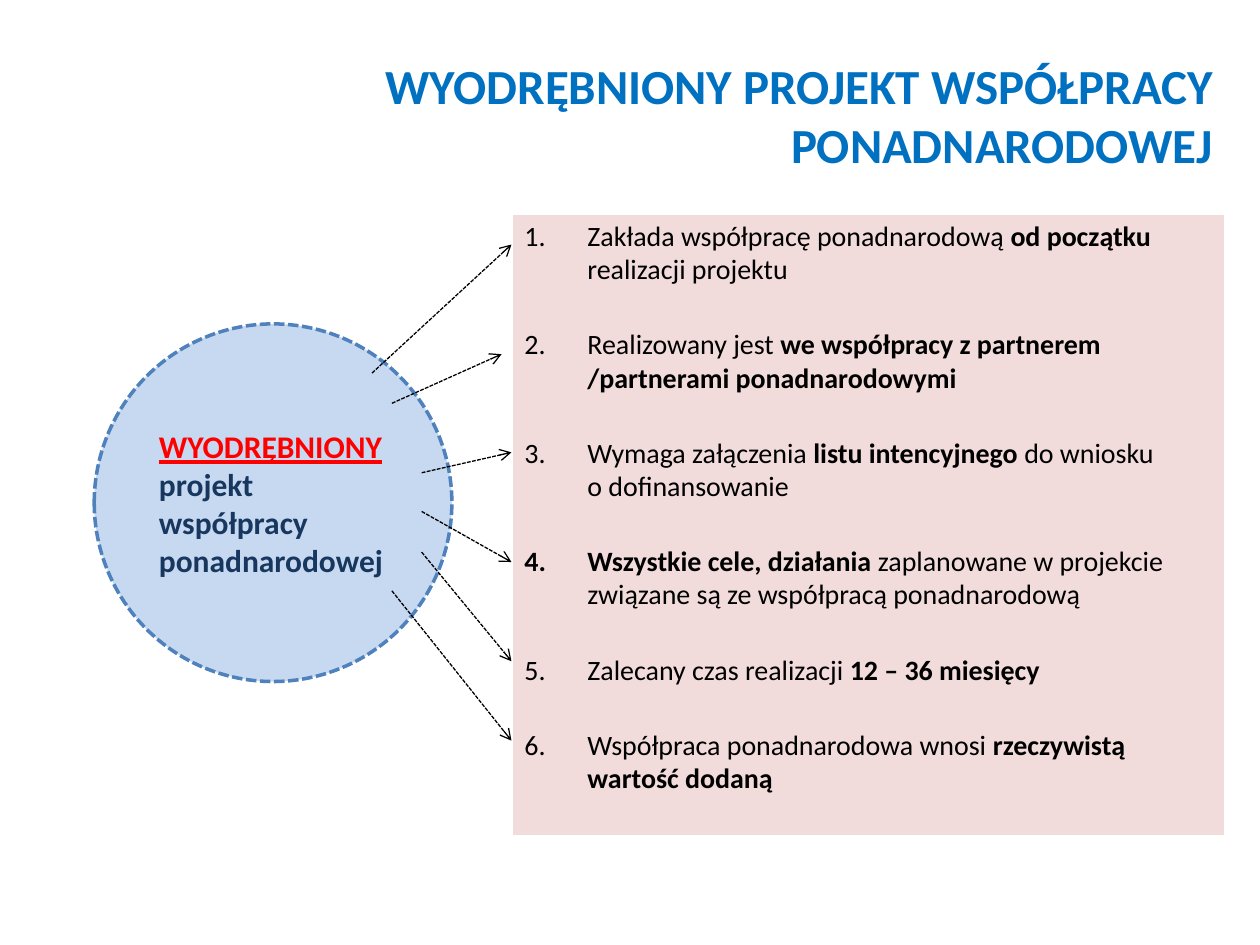
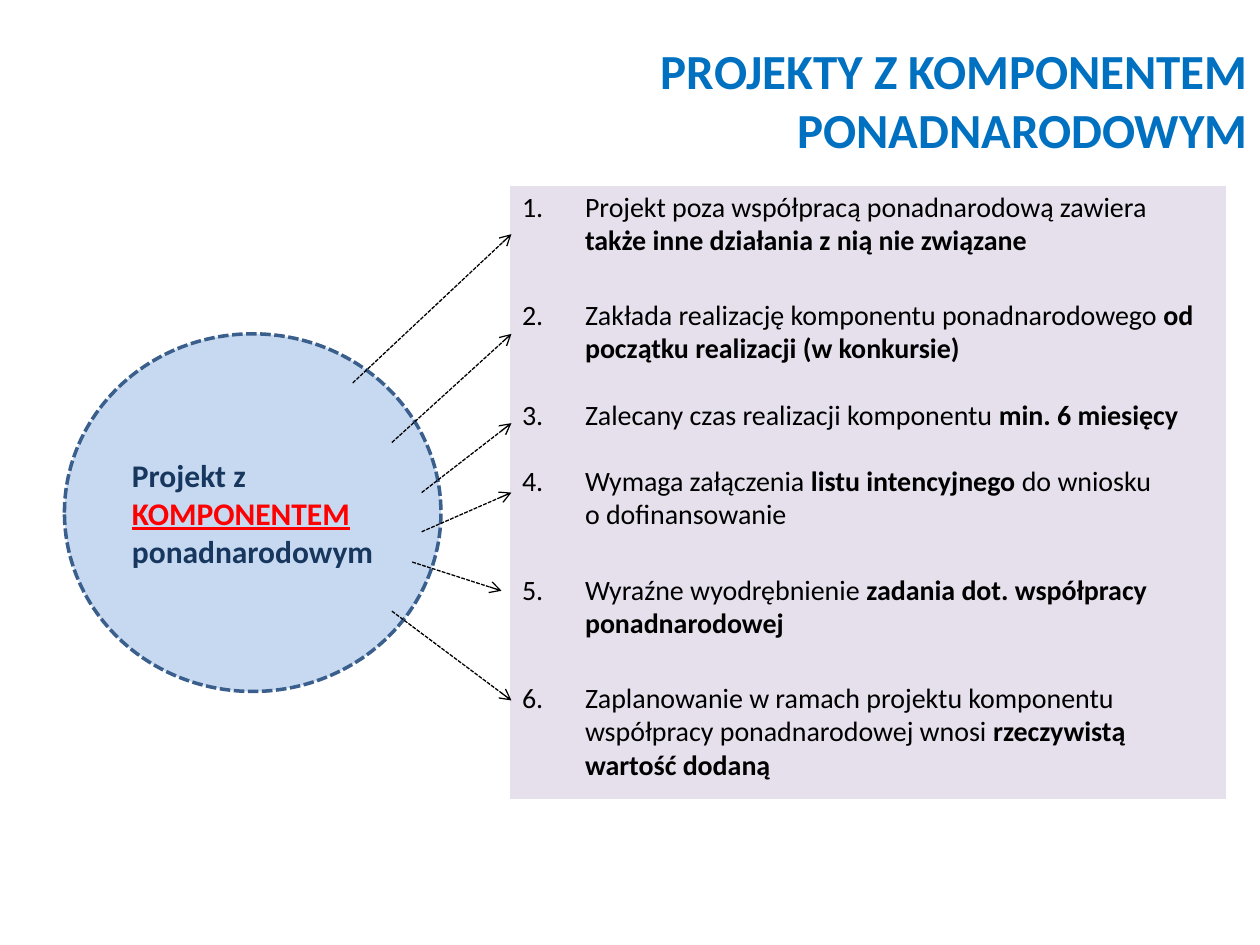
from dataclasses import dataclass

from lxml import etree
from pptx import Presentation
from pptx.dml.color import RGBColor
from pptx.enum.dml import MSO_LINE
from pptx.enum.shapes import MSO_CONNECTOR, MSO_SHAPE
from pptx.enum.text import MSO_ANCHOR, MSO_AUTO_SIZE, PP_ALIGN
from pptx.oxml.ns import qn
from pptx.util import Cm, Pt

DASH = MSO_LINE.SQUARE_DOT
STRAIGHT = MSO_CONNECTOR.STRAIGHT
OVAL = MSO_SHAPE.OVAL
MIDDLE = MSO_ANCHOR.MIDDLE
LEFT, RIGHT = PP_ALIGN.LEFT, PP_ALIGN.RIGHT
NO_FIT = MSO_AUTO_SIZE.NONE

# Shared look
FONT = "Calibri"
BLUE, NAVY, RED, BLACK, SKY = "0070C0", "17375E", "FF0000", "000000", "C6D9F1"
TITLE_ONLY = 5
INDENT = Cm(1.27)


@dataclass(frozen=True)
class Box:
    left: float
    top: float
    width: float
    height: float

    def sides(self) -> tuple:
        return Cm(self.left), Cm(self.top), Cm(self.width), Cm(self.height)


@dataclass(frozen=True)
class Item:
    text: str  # bold words stand between asterisks
    gap: float = 24  # points above the item


@dataclass(frozen=True)
class Arrow:
    x1: float
    y1: float
    x2: float
    y2: float


@dataclass(frozen=True)
class Page:
    title: str
    head: Box
    topic: str  # the key word stands between asterisks
    disc: Box
    rim: str
    grid: Box
    split: float  # width of the empty left column
    tint: str
    items: tuple[Item, ...]
    arrows: tuple[Arrow, ...]


PAGES = (
    Page(
        title="WYODRĘBNIONY PROJEKT WSPÓŁPRACY PONADNARODOWEJ",
        head=Box(6.7, 0.91, 18, 2.8),
        topic="*WYODRĘBNIONY* projekt współpracy ponadnarodowej",
        disc=Box(1.9, 6.53, 7.21, 7.21),
        rim="4F81BD",
        grid=Box(1.28, 4.32, 23.42, 12.52),
        split=9.04,
        tint="F2DCDB",
        items=(
            Item("Zakłada współpracę ponadnarodową *od początku* realizacji projektu"),
            Item("Realizowany jest *we współpracy z partnerem /partnerami ponadnarodowymi*"),
            Item("Wymaga załączenia *listu intencyjnego* do wniosku\no dofinansowanie"),
            Item("*Wszystkie cele, działania* zaplanowane w projekcie "
                 "związane są ze współpracą ponadnarodową"),
            Item("Zalecany czas realizacji *12 – 36 miesięcy*"),
            Item("Współpraca ponadnarodowa wnosi *rzeczywistą wartość dodaną*"),
        ),
        arrows=(
            Arrow(7.5, 7.52, 10.31, 4.93),
            Arrow(7.9, 8.13, 10.11, 7.14),
            Arrow(8.5, 9.53, 10.31, 9.12),
            Arrow(8.5, 10.31, 10.31, 11.33),
            Arrow(8.5, 11.13, 10.31, 13.33),
            Arrow(7.9, 11.91, 10.31, 14.93),
        ),
    ),
    Page(
        title="PROJEKTY Z KOMPONENTEM PONADNARODOWYM",
        head=Box(9.3, 0.71, 16.1, 2.59),
        topic="Projekt z *KOMPONENTEM* ponadnarodowym",
        disc=Box(1.3, 6.73, 7.59, 7.21),
        rim="3A5F8C",
        grid=Box(1.3, 3.73, 23.42, 12.4),
        split=8.97,
        tint="E6E0EC",
        items=(
            Item("Projekt poza współpracą ponadnarodową zawiera "
                 "*także inne działania z nią nie związane*"),
            Item("Zakłada realizację komponentu ponadnarodowego "
                 "*od początku realizacji (w konkursie)*"),
            Item("Zalecany czas realizacji komponentu *min. 6 miesięcy*", 19),
            Item("Wymaga załączenia *listu intencyjnego* do wniosku\no dofinansowanie", 19),
            Item("Wyraźne wyodrębnienie *zadania dot. współpracy ponadnarodowej*"),
            Item("Zaplanowanie w ramach projektu komponentu współpracy "
                 "ponadnarodowej wnosi *rzeczywistą wartość dodaną*"),
        ),
        arrows=(
            Arrow(7.11, 7.72, 10.31, 4.72),
            Arrow(7.9, 8.92, 10.31, 6.73),
            Arrow(8.5, 9.93, 10.31, 8.53),
            Arrow(8.5, 10.72, 10.31, 9.93),
            Arrow(8.31, 11.33, 10.11, 11.91),
            Arrow(7.9, 12.32, 10.31, 14.12),
        ),
    ),
)


def rgb(code: str) -> RGBColor:
    return RGBColor.from_string(code)


def style(run, size: float, color: str, bold: bool) -> None:
    run.font.name = FONT
    run.font.size = Pt(size)
    run.font.bold = bold
    run.font.color.rgb = rgb(color)


def write(para, text: str) -> list[tuple]:
    """Add runs and return each one with its marked state."""
    runs = []
    for i, part in enumerate(text.split("*")):
        for j, line in enumerate(part.split("\n")):
            if j:
                para.add_line_break()
            if line:
                run = para.add_run()
                run.text = line
                runs.append((run, i % 2 == 1))
    return runs


def add_title(slide, page: Page) -> None:
    head = slide.shapes.title
    head.left, head.top, head.width, head.height = page.head.sides()
    frame = head.text_frame
    frame.text = page.title
    frame.auto_size = NO_FIT
    frame.vertical_anchor = MIDDLE
    para = frame.paragraphs[0]
    para.alignment = RIGHT
    style(para.runs[0], 28, BLUE, True)


def add_item(para, item: Item, first: bool) -> None:
    props = para._p.get_or_add_pPr()
    props.set("marL", str(INDENT))
    props.set("indent", str(-INDENT))
    etree.SubElement(props, qn("a:buAutoNum"), type="arabicPeriod")
    para.line_spacing = Pt(19)
    para.space_before = Pt(0 if first else item.gap)
    for run, bold in write(para, item.text):
        style(run, 16, BLACK, bold)


def add_grid(slide, page: Page) -> None:
    table = slide.shapes.add_table(1, 2, *page.grid.sides()).table
    table.first_row = table.horz_banding = False
    table.columns[0].width = Cm(page.split)
    table.columns[1].width = Cm(page.grid.width - page.split)
    blank, cell = table.cell(0, 0), table.cell(0, 1)
    blank.fill.background()
    cell.fill.solid()
    cell.fill.fore_color.rgb = rgb(page.tint)
    frame = cell.text_frame
    for i, item in enumerate(page.items):
        para = frame.add_paragraph() if i else frame.paragraphs[0]
        add_item(para, item, i == 0)


def add_disc(slide, page: Page) -> None:
    disc = slide.shapes.add_shape(OVAL, *page.disc.sides())
    disc.shadow.inherit = False
    disc.fill.solid()
    disc.fill.fore_color.rgb = rgb(SKY)
    disc.line.color.rgb = rgb(page.rim)
    disc.line.width = Pt(2)
    disc.line.dash_style = DASH
    frame = disc.text_frame
    frame.word_wrap = True
    frame.vertical_anchor = MIDDLE
    para = frame.paragraphs[0]
    para.alignment = LEFT
    for run, key in write(para, page.topic):
        style(run, 18, RED if key else NAVY, True)
        run.font.underline = key


def add_arrow(slide, arrow: Arrow) -> None:
    link = slide.shapes.add_connector(
        STRAIGHT, Cm(arrow.x1), Cm(arrow.y1), Cm(arrow.x2), Cm(arrow.y2))
    link.line.color.rgb = rgb(BLACK)
    link.line.width = Pt(0.75)
    link.line.dash_style = DASH
    etree.SubElement(link.line._get_or_add_ln(), qn("a:tailEnd"), type="arrow")
    etree.SubElement(link._element.spPr, qn("a:effectLst"))


def main() -> None:
    deck = Presentation()
    deck.slide_width, deck.slide_height = Cm(25.4), Cm(19.05)
    for page in PAGES:
        slide = deck.slides.add_slide(deck.slide_layouts[TITLE_ONLY])
        add_title(slide, page)
        add_grid(slide, page)
        add_disc(slide, page)
        for arrow in page.arrows:
            add_arrow(slide, arrow)
    deck.save("out.pptx")


if __name__ == "__main__":
    main()
